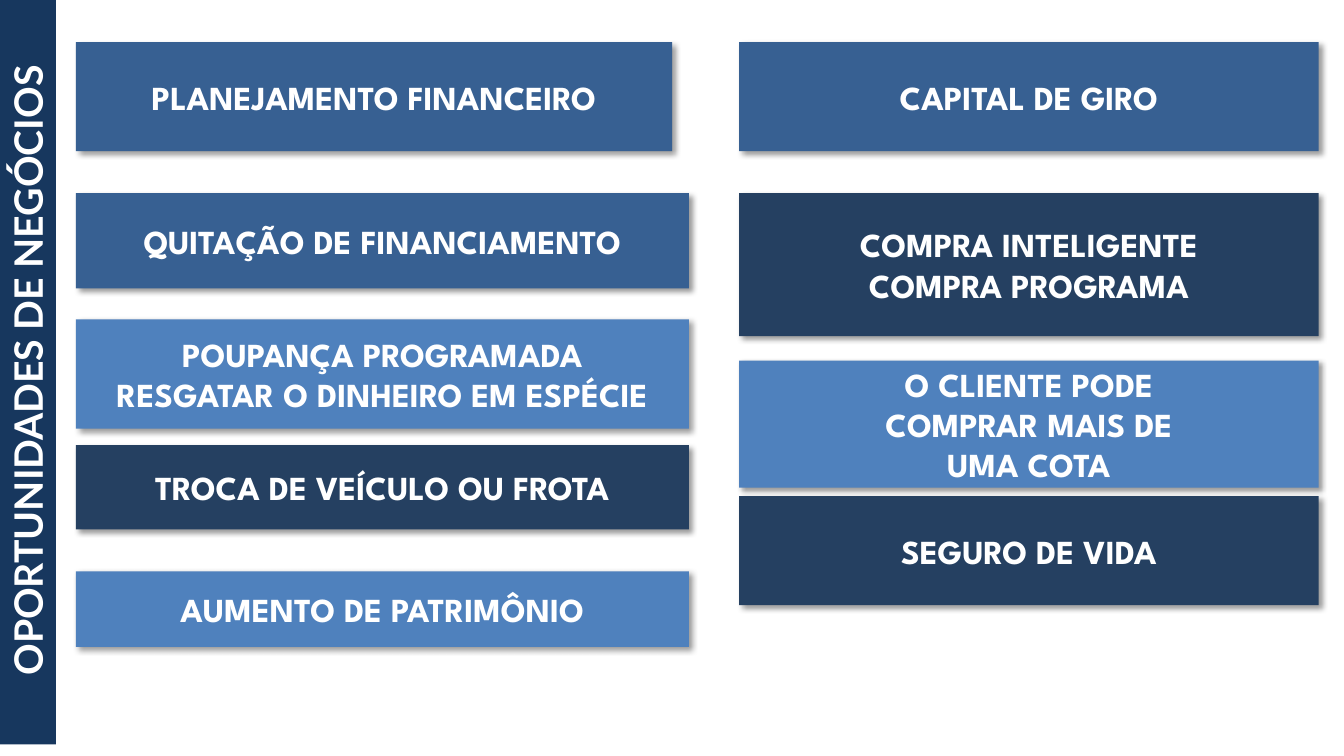
from dataclasses import dataclass

from lxml import etree
from pptx import Presentation
from pptx import util as u
from pptx.dml.color import RGBColor
from pptx.enum import shapes, text
from pptx.oxml import ns


@dataclass(frozen=True)
class Theme:
    white: str = "FFFFFF"
    black: str = "000000"
    side: str = "17375E"
    dark: str = "254061"
    mid: str = "376092"
    light: str = "4F81BD"
    card_font: str = "League Spartan"
    side_font: str = "Lato"
    card_size: int = 24
    side_size: int = 28


class Deck:
    def __init__(self, theme, width, height):
        self.theme = theme
        self.prs = Presentation()
        self.prs.slide_width, self.prs.slide_height = u.Cm(width), u.Cm(height)
        self.slide = self.prs.slides.add_slide(self.prs.slide_layouts[6])
        fill = self.slide.background.fill
        fill.solid()
        fill.fore_color.rgb = RGBColor.from_string(theme.white)

    def block(self, box, color, words, font, size):
        """Add a borderless rectangle with centred bold text; box is in cm."""
        shape = self.slide.shapes.add_shape(
            shapes.MSO_SHAPE.RECTANGLE, *map(u.Cm, box))
        shape.shadow.inherit = False
        shape.fill.solid()
        shape.fill.fore_color.rgb = RGBColor.from_string(color)
        shape.line.fill.background()
        frame = shape.text_frame
        frame.word_wrap = True
        frame.vertical_anchor = text.MSO_ANCHOR.MIDDLE
        frame.text = words
        for para in frame.paragraphs:
            para.alignment = text.PP_ALIGN.CENTER
            for run in para.runs:
                run.font.name = font
                run.font.size = u.Pt(size)
                run.font.bold = True
                run.font.color.rgb = RGBColor.from_string(self.theme.white)
        return shape

    def card(self, box, color, words):
        look = self.theme
        shape = self.block(box, color, words, look.card_font, look.card_size)
        frame = shape.text_frame
        frame.margin_left = frame.margin_right = u.Cm(0.33)
        frame.margin_top = frame.margin_bottom = u.Cm(0.33)
        self.shade(shape)

    def shade(self, shape):
        """Give the shape a soft shadow towards the lower right."""
        effects = shape._element.spPr.find(ns.qn("a:effectLst"))
        outer = etree.SubElement(
            effects, ns.qn("a:outerShdw"), blurRad=str(u.Pt(4)),
            dist=str(u.Pt(3)), dir=str(45 * 60000), algn="tl",
            rotWithShape="0")
        tint = etree.SubElement(outer, ns.qn("a:srgbClr"), val=self.theme.black)
        etree.SubElement(tint, ns.qn("a:alpha"), val="40000")

    def banner(self, box, words):
        look = self.theme
        shape = self.block(box, look.side, words, look.side_font, look.side_size)
        shape.rotation = 270

    def save(self):
        self.prs.save("out.pptx")


def main():
    look = Theme()
    deck = Deck(look, 33.87, 19.05)
    deck.banner((-8.74, 8.61, 18.85, 1.45), "OPORTUNIDADES DE NEGÓCIOS")

    # Each card: top, width, height, colour, words
    left = [
        (1.06, 15.03, 2.75, look.mid, "PLANEJAMENTO FINANCEIRO"),
        (4.87, 15.45, 2.4, look.mid, "QUITAÇÃO DE FINANCIAMENTO"),
        (8.05, 15.45, 2.75, look.light,
         "POUPANÇA PROGRAMADA\nRESGATAR O DINHEIRO EM ESPÉCIE"),
        (11.22, 15.45, 2.12, look.dark, "TROCA DE VEÍCULO OU FROTA"),
        (14.4, 15.45, 1.9, look.light, "AUMENTO DE PATRIMÔNIO"),
    ]
    right = [
        (1.06, 14.6, 2.75, look.mid, "CAPITAL DE GIRO"),
        (4.87, 14.6, 3.6, look.dark, "COMPRA INTELIGENTE\nCOMPRA PROGRAMA"),
        (9.09, 14.6, 3.2, look.light,
         "O CLIENTE PODE\nCOMPRAR MAIS DE\nUMA COTA"),
        (12.5, 14.6, 2.75, look.dark, "SEGURO DE VIDA"),
    ]
    for x, cards in ((1.91, left), (18.63, right)):
        for top, width, height, color, words in cards:
            deck.card((x, top, width, height), color, words)
    deck.save()


if __name__ == "__main__":
    main()
